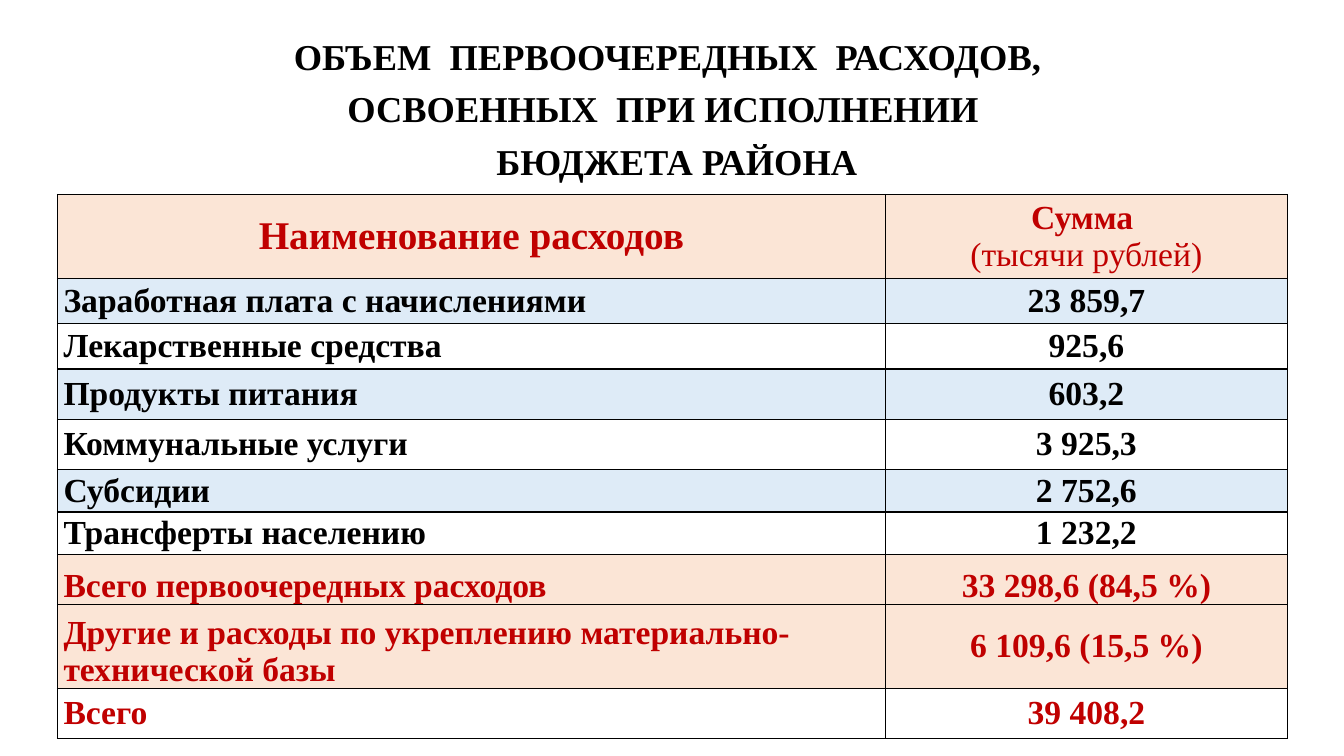
"""Builds a slide with a table of priority budget expenses."""
from lxml.etree import SubElement
from pptx import Presentation
from pptx.dml.color import RGBColor
from pptx.enum.text import MSO_ANCHOR as Anchor, PP_ALIGN as Align
from pptx.oxml.ns import qn
from pptx.util import Pt

BLACK = RGBColor(0x00, 0x00, 0x00)
RED = RGBColor(0xC0, 0x00, 0x00)
PEACH = RGBColor(0xFB, 0xE5, 0xD6)
BLUE = RGBColor(0xDE, 0xEB, 0xF7)
WHITE = RGBColor(0xFF, 0xFF, 0xFF)
FONT = "Times New Roman"
PX = 9144

TITLE = ("ОБЪЕМ  ПЕРВООЧЕРЕДНЫХ  РАСХОДОВ, \v"
         "ОСВОЕННЫХ  ПРИ ИСПОЛНЕНИИ  \v БЮДЖЕТА РАЙОНА")
TITLE_BOX = (92, 42, 1150, 122)
TABLE_LEFT, TABLE_TOP = 57, 193
COLUMN_WIDTHS = (821, 399)
MIDDLE, BOTTOM = Anchor.MIDDLE, Anchor.BOTTOM

EXPENSES = [
    ("Наименование расходов", "Сумма \n(тысячи рублей)", 83, PEACH, RED, MIDDLE, MIDDLE),
    ("Заработная плата с начислениями", "23 859,7", 45, BLUE, BLACK, MIDDLE, MIDDLE),
    ("Лекарственные средства", "925,6", 45, WHITE, BLACK, MIDDLE, MIDDLE),
    ("Продукты питания", "603,2", 50, BLUE, BLACK, MIDDLE, MIDDLE),
    ("Коммунальные услуги", "3 925,3", 50, WHITE, BLACK, MIDDLE, MIDDLE),
    ("Субсидии", "2 752,6", 42, BLUE, BLACK, MIDDLE, MIDDLE),
    ("Трансферты населению", "1 232,2", 42, WHITE, BLACK, MIDDLE, MIDDLE),
    ("Всего первоочередных расходов", "33 298,6 (84,5 %)", 50, PEACH, RED, BOTTOM, BOTTOM),
    ("Другие и расходы по укреплению материально-технической базы",
     "6 109,6 (15,5 %)", 83, PEACH, RED, BOTTOM, MIDDLE),
    ("Всего", "39 408,2", 50, WHITE, RED, MIDDLE, MIDDLE),
]


def style(paragraph, size, color, align, bold=True):
    paragraph.alignment = align
    for run in paragraph.runs:
        run.font.name = FONT
        run.font.size = Pt(size)
        run.font.bold = bold
        run.font.color.rgb = color


def add_borders(cell):
    properties = cell._tc.get_or_add_tcPr()
    for position, side in enumerate(("a:lnL", "a:lnR", "a:lnT", "a:lnB")):
        border = SubElement(properties, qn(side), w=str(Pt(1)))
        line_fill = SubElement(border, qn("a:solidFill"))
        SubElement(line_fill, qn("a:srgbClr"), val=str(BLACK))
        properties.insert(position, border)


def fill_cell(cell, text, size, color, fill, align, anchor):
    cell.text_frame.text = text
    cell.vertical_anchor = anchor
    cell.margin_left = cell.margin_right = 6 * PX
    cell.margin_top = cell.margin_bottom = 0
    cell.fill.solid()
    cell.fill.fore_color.rgb = fill
    add_borders(cell)
    for number, paragraph in enumerate(cell.text_frame.paragraphs):
        style(paragraph, size, color, align, bold=number == 0)


def add_title(slide):
    title = slide.shapes.add_textbox(*(length * PX for length in TITLE_BOX)).text_frame
    title.word_wrap = True
    title.vertical_anchor = Anchor.MIDDLE
    title.text = TITLE
    heading = title.paragraphs[0]
    heading.line_spacing = 1.2
    style(heading, 26, BLACK, Align.CENTER)


def add_expenses(slide):
    heights = [expense[2] for expense in EXPENSES]
    table = slide.shapes.add_table(
        len(EXPENSES), len(COLUMN_WIDTHS), TABLE_LEFT * PX, TABLE_TOP * PX,
        sum(COLUMN_WIDTHS) * PX, sum(heights) * PX).table
    for column, width in zip(table.columns, COLUMN_WIDTHS):
        column.width = width * PX
    for index, expense in enumerate(EXPENSES):
        name, amount, height, fill, color, name_anchor, amount_anchor = expense
        is_header = index == 0
        table.rows[index].height = height * PX
        fill_cell(table.cell(index, 0), name, 28 if is_header else 24, color, fill,
                  Align.CENTER if is_header else Align.LEFT, name_anchor)
        fill_cell(table.cell(index, 1), amount, 24, color, fill,
                  Align.CENTER, amount_anchor)


def main():
    deck = Presentation()
    deck.slide_width, deck.slide_height = 1333 * PX, 750 * PX
    slide = deck.slides.add_slide(deck.slide_layouts[6])
    add_title(slide)
    add_expenses(slide)
    deck.save("out.pptx")


if __name__ == "__main__":
    main()
